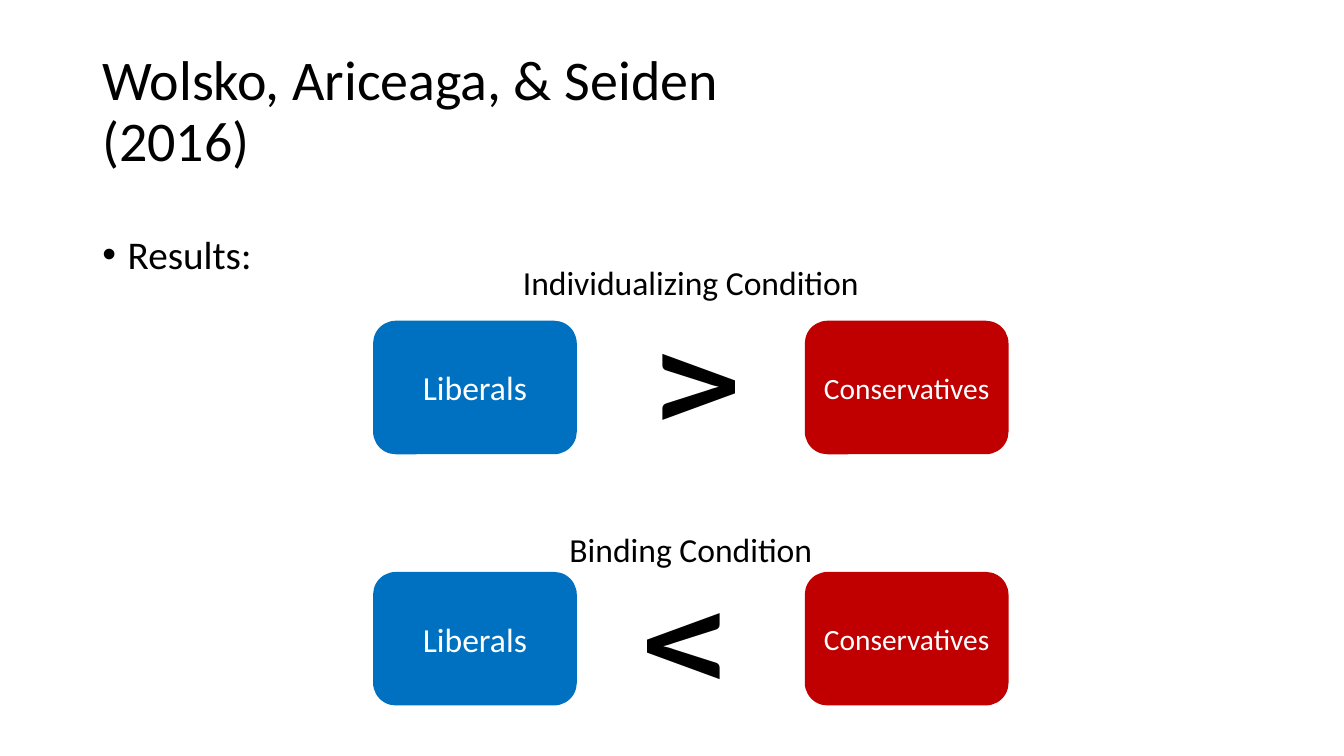
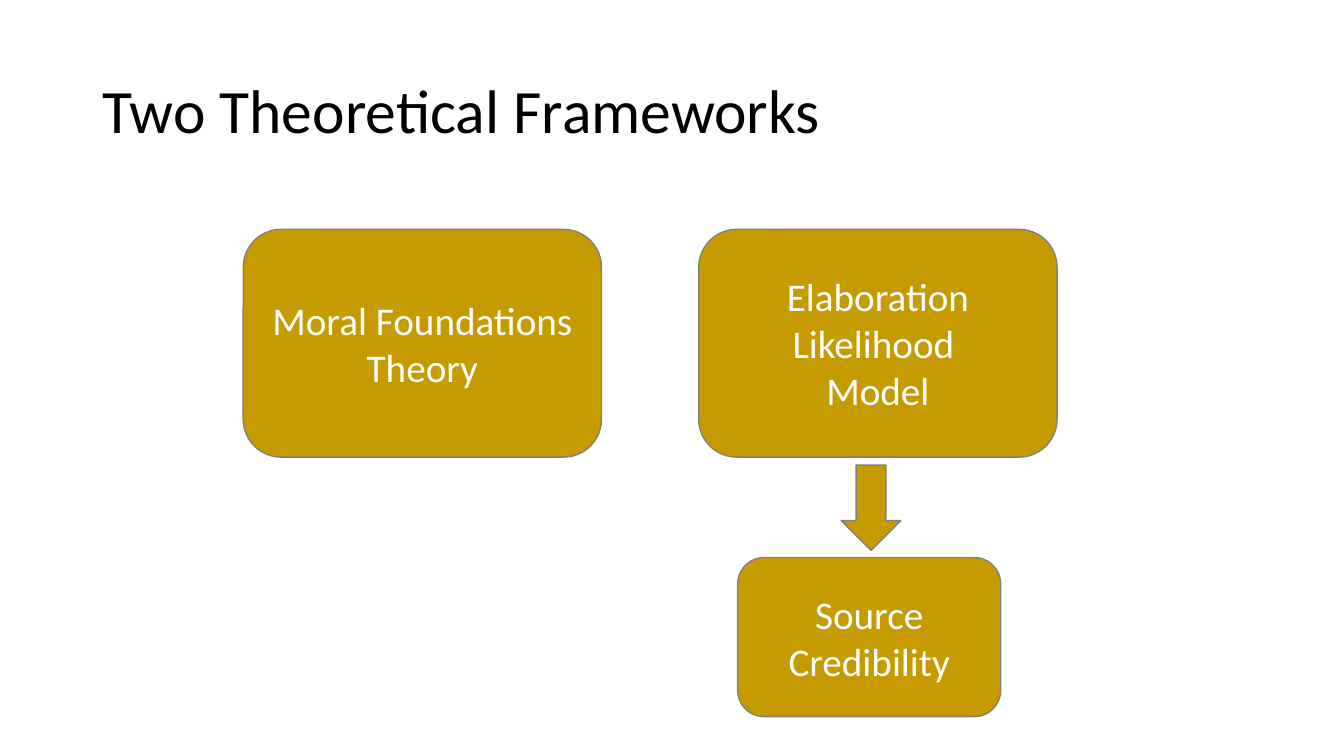
import dataclasses

import lxml.etree
import pptx
import pptx.dml.color
import pptx.enum.shapes
import pptx.enum.text
import pptx.oxml.ns
import pptx.util

Cm = pptx.util.Cm
Pt = pptx.util.Pt
Shape = pptx.enum.shapes.MSO_SHAPE
Align = pptx.enum.text.PP_ALIGN
Anchor = pptx.enum.text.MSO_ANCHOR


@dataclasses.dataclass(frozen=True)
class Theme:
    font: str = "Calibri"
    ink: str = "000000"
    white: str = "FFFFFF"
    blue: str = "0070C0"
    red: str = "C00000"
    gold: str = "C59B00"
    grey: str = "808080"
    title: int = 44
    long: int = 40
    body: int = 28
    label: int = 24
    small: int = 21
    sign: int = 80


theme = Theme()


def write(shape, text, size, color=theme.ink, anchor=Anchor.TOP, bold=False, **form):
    """Fill a shape with text, one paragraph a line; form holds paragraph values."""
    frame = shape.text_frame
    frame.word_wrap = True
    frame.vertical_anchor = anchor
    frame.text = text
    face = {"name": theme.font, "size": Pt(size), "bold": bold}
    for para in frame.paragraphs:
        for key, value in form.items():
            setattr(para, key, value)
        for run in para.runs:
            for key, value in face.items():
                setattr(run.font, key, value)
            run.font.color.rgb = pptx.dml.color.RGBColor.from_string(color)
    return frame


def block(slide, kind, box, fill, line, text="", size=theme.body):
    """Draw a filled shape with centred white text; box is in centimetres."""
    shape = slide.shapes.add_shape(kind, *map(Cm, box))
    shape.shadow.inherit = False
    shape.fill.solid()
    shape.fill.fore_color.rgb = pptx.dml.color.RGBColor.from_string(fill)
    shape.line.color.rgb = pptx.dml.color.RGBColor.from_string(line)
    shape.line.width = Pt(1)
    if text:
        write(shape, text, size, theme.white, Anchor.MIDDLE, alignment=Align.CENTER)


deck = pptx.Presentation()
deck.slide_width = Cm(33.87)
deck.slide_height = Cm(19.05)

# Titles
heads = [
    ("Wolsko, Ariceaga, & Seiden (2016)", theme.long, 19.91),
    ("Two Theoretical Frameworks", theme.title, 29.21),
]
slides = []
for text, size, width in heads:
    slide = deck.slides.add_slide(deck.slide_layouts[6])
    title = slide.shapes.add_textbox(Cm(2.33), Cm(1.01), Cm(width), Cm(3.68))
    write(title, text, size, anchor=Anchor.MIDDLE, line_spacing=0.9)
    slides.append(slide)
results, frames = slides

# Results: bullet
body = results.shapes.add_textbox(Cm(2.33), Cm(5.08), Cm(6.5), Cm(2.2))
frame = write(body, "Results:", theme.body, line_spacing=1.5, space_before=Pt(10))
props = frame.paragraphs[0]._p.get_or_add_pPr()
props.set("marL", str(Cm(0.64)))
props.set("indent", str(-Cm(0.64)))
for tag, key, value in [("a:buFont", "typeface", "Arial"), ("a:buChar", "char", "•")]:
    lxml.etree.SubElement(props, pptx.oxml.ns.qn(tag)).set(key, value)

# Results: one row per condition, with a turned V as the sign
groups = [
    (9.42, theme.blue, "Liberals", theme.label),
    (20.3, theme.red, "Conservatives", theme.small),
]
rows = [
    ("Individualizing Condition", 6.48, 8.1, 7.29, 270),
    ("Binding Condition", 13.21, 14.43, 15.09, 90),
]
for text, head, top, mark, turn in rows:
    for left, color, name, size in groups:
        block(results, Shape.ROUNDED_RECTANGLE, (left, top, 5.1, 3.33),
              color, color, name, size)
    sign = results.shapes.add_textbox(Cm(15.71), Cm(mark), Cm(3.43), Cm(3.68))
    sign.rotation = turn
    write(sign, "V", theme.sign, bold=True)
    label = results.shapes.add_textbox(Cm(12.41), Cm(head), Cm(10), Cm(1.27))
    write(label, text, theme.label, alignment=Align.CENTER)

# Frameworks: three boxes and an arrow
parts = [
    (Shape.ROUNDED_RECTANGLE, (6.13, 5.78, 9.03, 5.74), "Moral Foundations Theory"),
    (Shape.ROUNDED_RECTANGLE, (17.61, 5.78, 9.03, 5.74),
     "Elaboration Likelihood \nModel"),
    (Shape.DOWN_ARROW, (21.2, 11.72, 1.5, 2.15), ""),
    (Shape.ROUNDED_RECTANGLE, (18.59, 14.05, 6.63, 4.01), "Source Credibility"),
]
for kind, box, text in parts:
    block(frames, kind, box, theme.gold, theme.grey, text)

deck.save("out.pptx")
